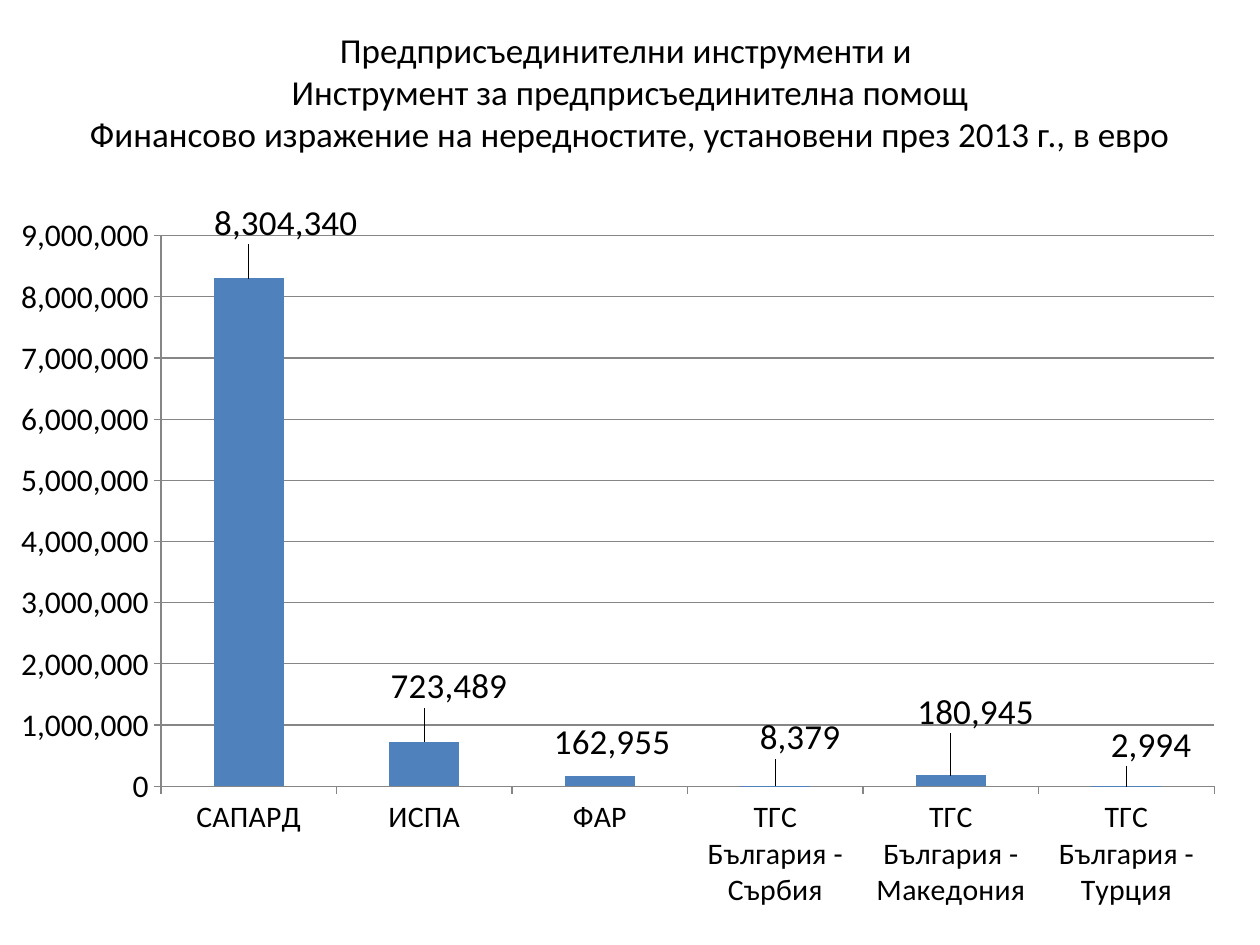
from lxml import etree
from pptx import Presentation
from pptx.chart.data import CategoryChartData
from pptx.dml.color import RGBColor
from pptx.enum.chart import XL_CHART_TYPE, XL_LABEL_POSITION, XL_TICK_MARK
from pptx.enum.text import MSO_ANCHOR, PP_ALIGN
from pptx.oxml.ns import qn
from pptx.util import Pt

COLUMNS = XL_CHART_TYPE.COLUMN_CLUSTERED
OUTSIDE_END = XL_LABEL_POSITION.OUTSIDE_END
TICK_OUTSIDE = XL_TICK_MARK.OUTSIDE
MIDDLE = MSO_ANCHOR.MIDDLE
CENTER = PP_ALIGN.CENTER

FONT = "Calibri"
BLACK, BLUE, GRAY = "000000", "4F81BD", "868686"
NUMBER_FORMAT = "#,##0"
TITLE_LINES = [
    "Предприсъединителни инструменти и ",
    "Инструмент за предприсъединителна помощ",
    "Финансово изражение на нередностите, установени през 2013 г., в евро",
]
IRREGULARITIES = [
    ("САПАРД", 8304340, (0.03, -0.04)),
    ("ИСПА", 723489, (0.02, -0.04)),
    ("ФАР", 162955, (0.01, -0.01)),
    ("ТГС България -\nСърбия", 8379, (0.02, -0.03)),
    ("ТГС България -\nМакедония", 180945, (0.02, -0.05)),
    ("ТГС България - Турция", 2994, (0.02, -0.02)),
]


def color(hex_string):
    """Return the colour for a hex string."""
    return RGBColor.from_string(hex_string)


def format_font(font, size):
    """Give a font the slide's typeface and colour at a size in points."""
    font.name = FONT
    font.size = Pt(size)
    font.bold = False
    font.color.rgb = color(BLACK)


def make_layout(**settings):
    """Return a manual chart layout with the given settings in order."""
    layout = etree.Element(qn("c:layout"))
    manual = etree.SubElement(layout, qn("c:manualLayout"))
    for name, value in settings.items():
        etree.SubElement(manual, qn(f"c:{name}")).set("val", str(value))
    return layout


def add_title(slide, left, top, width, height):
    """Place and format the title in the given box."""
    title = slide.shapes.title
    title.left, title.top = Pt(left), Pt(top)
    title.width, title.height = Pt(width), Pt(height)
    text_frame = title.text_frame
    text_frame.text = "\v".join(TITLE_LINES)
    text_frame.word_wrap = True
    text_frame.vertical_anchor = MIDDLE
    paragraph = text_frame.paragraphs[0]
    paragraph.alignment = CENTER
    for run in paragraph.runs:
        format_font(run.font, 20)


def format_axes(chart):
    """Format both axes and the gridlines."""
    for axis, size in ((chart.category_axis, 17), (chart.value_axis, 18)):
        format_font(axis.tick_labels.font, size)
        axis.major_tick_mark = TICK_OUTSIDE
        axis.format.line.color.rgb = color(GRAY)
        axis.format.line.width = Pt(0.75)
    value_axis = chart.value_axis
    value_axis.minimum_scale = 0
    value_axis.maximum_scale = 9000000
    value_axis.major_unit = 1000000
    value_axis.tick_labels.number_format = NUMBER_FORMAT
    value_axis.tick_labels.number_format_is_linked = False
    gridline = value_axis.major_gridlines.format.line
    gridline.color.rgb = color(GRAY)
    gridline.width = Pt(0.75)


def format_labels(chart):
    """Show the values and shift each label from its column."""
    series = chart.plots[0].series[0]
    labels = series.data_labels
    labels.show_value = True
    labels.number_format = NUMBER_FORMAT
    labels.number_format_is_linked = False
    labels.position = OUTSIDE_END
    format_font(labels.font, 20)
    for index in range(len(IRREGULARITIES)):
        label = series.points[index].data_label
        label.position = OUTSIDE_END
        format_font(label.font, 20)
    label_elements = chart.element.xpath("//c:dLbl")
    for element, (_, _, (x, y)) in zip(label_elements, IRREGULARITIES):
        element.insert(1, make_layout(x=x, y=y))


def add_irregularities_chart(slide, left, top, width, height):
    """Place the column chart in the given box."""
    data = CategoryChartData(number_format=NUMBER_FORMAT)
    data.categories = [name for name, _, _ in IRREGULARITIES]
    data.add_series("Series 1", [value for _, value, _ in IRREGULARITIES])
    chart = slide.shapes.add_chart(
        COLUMNS, Pt(left), Pt(top), Pt(width), Pt(height), data
    ).chart
    chart.has_title = False
    chart.has_legend = False
    format_font(chart.font, 18)
    plot = chart.plots[0]
    plot.gap_width = 150
    plot.vary_by_categories = False
    fill = plot.series[0].format.fill
    fill.solid()
    fill.fore_color.rgb = color(BLUE)
    format_axes(chart)
    format_labels(chart)
    plot_area = chart.element.xpath("//c:plotArea")[0]
    for layout in plot_area.findall(qn("c:layout")):
        plot_area.remove(layout)
    plot_area.insert(0, make_layout(
        layoutTarget="inner", xMode="edge", yMode="edge",
        x=0.13, y=0.05, w=0.85, h=0.76,
    ))


def main():
    """Build and save the presentation."""
    presentation = Presentation()
    presentation.slide_width, presentation.slide_height = Pt(720), Pt(540)
    slide = presentation.slides.add_slide(presentation.slide_layouts[5])
    add_title(slide, 6, 18, 708, 68.4)
    add_irregularities_chart(slide, 0, 114, 708, 414)
    presentation.save("out.pptx")


if __name__ == "__main__":
    main()
